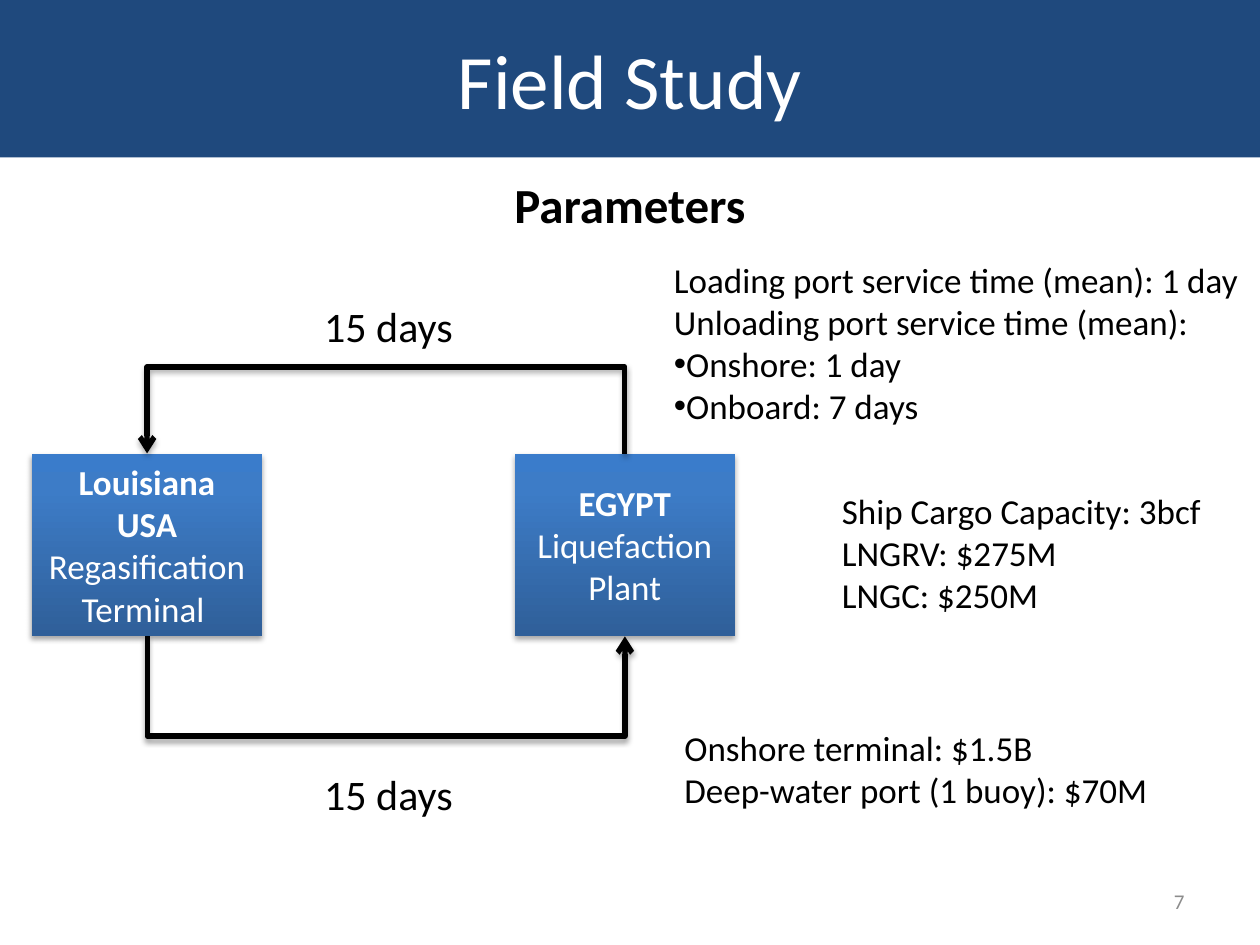
import pptx
import pptx.util
import pptx.dml.color
import pptx.enum.shapes
import pptx.enum.text
import pptx.oxml
import pptx.oxml.ns

COLS, ROWS = 120, 90
NS = pptx.oxml.ns.nsdecls("a")
ALIGN = pptx.enum.text.PP_ALIGN
ANCHOR = pptx.enum.text.MSO_ANCHOR


def rgb(value):
    return pptx.dml.color.RGBColor.from_string(value)


def xml(body):
    tag, rest = body.split(">", 1)
    return pptx.oxml.parse_xml(f"{tag} {NS}>{rest}")


class Deck:
    font = "Calibri"
    ink, paper, navy, grey = "000000", "FFFFFF", "1F497D", "8C8C8C"
    gradient = ((0, "2F5F99"), (80, "3D7CC7"), (100, "3A7CCB"))

    def __init__(self):
        self.prs = pptx.Presentation()
        self.prs.slide_width = pptx.util.Inches(10)
        self.prs.slide_height = pptx.util.Inches(7.5)
        self.s = self.prs.slides.add_slide(self.prs.slide_layouts[6])

    def x(self, cols):
        return round(self.prs.slide_width * cols / COLS)

    def y(self, rows):
        return round(self.prs.slide_height * rows / ROWS)

    def area(self, col, row, cols, rows):
        return self.x(col), self.y(row), self.x(cols), self.y(rows)

    def set_lines(self, sp, lines, size, color, align, anchor, bold=0, bullets=()):
        tf = sp.text_frame
        tf.word_wrap = True
        tf.vertical_anchor = anchor
        for i, line in enumerate(lines):
            p = tf.paragraphs[0] if i == 0 else tf.add_paragraph()
            p.alignment = align
            if i in bullets:
                pPr = p._p.get_or_add_pPr()
                pPr.append(xml('<a:buFont typeface="Arial"></a:buFont>'))
                pPr.append(xml('<a:buChar char="•"></a:buChar>'))
            r = p.add_run()
            r.text = line
            r.font.name = self.font
            r.font.size = pptx.util.Pt(size)
            r.font.bold = i < bold
            r.font.color.rgb = rgb(color)

    def text(self, area, lines, size=20, color=ink, align=ALIGN.LEFT,
             anchor=ANCHOR.TOP, **style):
        sp = self.s.shapes.add_textbox(*self.area(*area))
        self.set_lines(sp, lines, size, color, align, anchor, **style)

    def rect(self, area, lines, size, **style):
        kind = pptx.enum.shapes.MSO_SHAPE.RECTANGLE
        sp = self.s.shapes.add_shape(kind, *self.area(*area))
        sp.shadow.inherit = False
        sp.fill.solid()
        sp.fill.fore_color.rgb = rgb(self.navy)
        sp.line.fill.background()
        self.set_lines(sp, lines, size, self.paper, ALIGN.CENTER, ANCHOR.MIDDLE, **style)
        return sp

    def cast_shadow(self, spPr):
        for old in spPr.findall(pptx.oxml.ns.qn("a:effectLst")):
            spPr.remove(old)
        spPr.append(xml(
            '<a:effectLst><a:outerShdw blurRad="40000" dist="23000" dir="5400000" '
            'rotWithShape="0"><a:srgbClr val="000000"><a:alpha val="35000"/>'
            '</a:srgbClr></a:outerShdw></a:effectLst>'))

    def port(self, area, lines, bold):
        sp = self.rect(area, lines, 20, bold=bold)
        spPr = sp._element.spPr
        stops = "".join(f'<a:gs pos="{pos * 1000}"><a:srgbClr val="{color}"/></a:gs>'
                        for pos, color in self.gradient)
        solid = spPr.find(pptx.oxml.ns.qn("a:solidFill"))
        spPr.replace(solid, xml(f'<a:gradFill><a:gsLst>{stops}</a:gsLst>'
                                '<a:lin ang="16200000" scaled="0"/></a:gradFill>'))
        self.cast_shadow(spPr)

    def route(self, left, right, row, depth, flip):
        thin = 1588
        span = self.x(right - left)
        kind = pptx.enum.shapes.MSO_CONNECTOR.ELBOW
        cx, cy = self.x((left + right) / 2), self.y(row)
        top = cy - span // 2
        c = self.s.shapes.add_connector(kind, cx, top, cx + thin, top + span)
        c.line.color.rgb = rgb(self.ink)
        c.line.width = pptx.util.Pt(3)
        spPr = c._element.spPr
        spPr.get_or_add_ln().append(xml('<a:tailEnd type="arrow"></a:tailEnd>'))
        spPr.xfrm.set("rot", "16200000")
        spPr.xfrm.set(flip, "1")
        bend = round(self.y(depth) / thin * 100000)
        geom = spPr.find(pptx.oxml.ns.qn("a:prstGeom"))
        for old in list(geom):
            geom.remove(old)
        geom.append(xml(f'<a:avLst><a:gd name="adj1" fmla="val {bend}"/></a:avLst>'))
        self.cast_shadow(spPr)


def main():
    d = Deck()
    d.rect((0, 0, COLS, 15), ["Field Study"], 44)
    d.text((86, 83.4, 28, 4.8), ["7"], 12, d.grey, ALIGN.RIGHT, ANCHOR.MIDDLE)

    top, height = 43.2, 17.4
    d.port((3, top, 22, height),
           ["Louisiana", "USA", "Regasification", "Terminal "], bold=2)
    d.port((49, top, 21, height), ["EGYPT", "Liquefaction", "Plant"], bold=1)
    d.route(14, 59.5, top, 9.1, "flipV")
    d.route(14, 59.5, top + height, 10.5, "flipH")
    for row in (28, 72.6):
        d.text((27, row, 20, 6), ["15 days"], 24, align=ALIGN.CENTER)

    d.text((63, 24, 57, 17.4),
           ["Loading port service time (mean): 1 day",
            "Unloading port service time (mean):",
            "Onshore: 1 day", "Onboard: 7 days"], bullets=(2, 3))
    d.text((79, 46, 41, 17.4),
           ["Ship Cargo Capacity: 3bcf", "LNGRV: $275M", "LNGC: $250M"])
    d.text((64, 68.6, 48, 17.4),
           ["Onshore terminal: $1.5B", "Deep-water port (1 buoy): $70M"])
    d.text((0, 16, COLS, 6.8), ["Parameters"], 28, align=ALIGN.CENTER, bold=1)
    d.prs.save("out.pptx")


if __name__ == "__main__":
    main()
